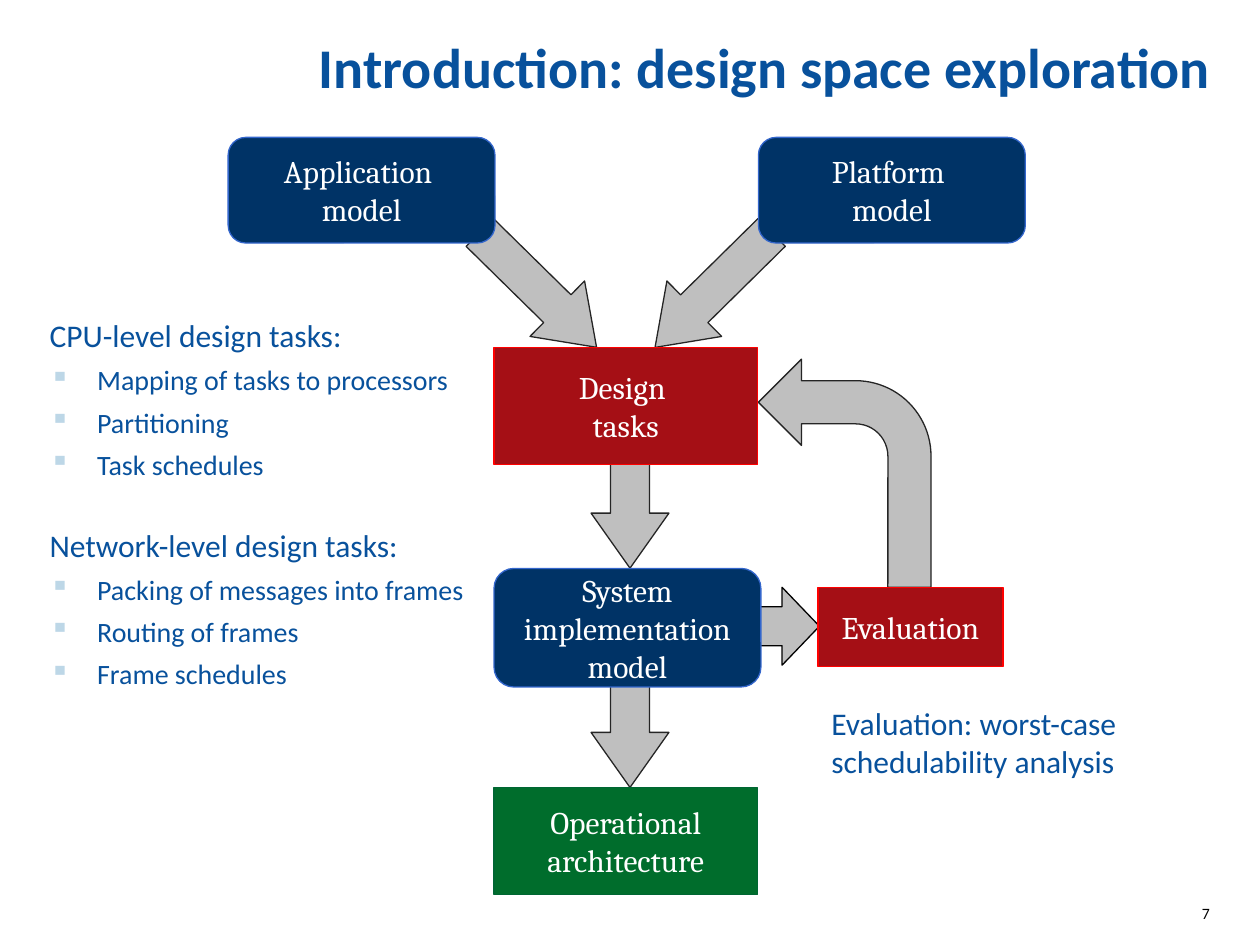
import pptx
import pptx.util
import pptx.dml.color
import pptx.enum.shapes
import pptx.enum.text
import pptx.oxml.ns
import lxml.etree

Cm, Pt = pptx.util.Cm, pptx.util.Pt
KIND = pptx.enum.shapes.MSO_SHAPE
ALIGN = pptx.enum.text.PP_ALIGN
ANCHOR = pptx.enum.text.MSO_ANCHOR
COLOR = {
    "text": "08519C", "mark": "BDD7E7", "white": "FFFFFF", "black": "000000",
    "gray": "BFBFBF", "dark": "252525", "navy": "003366", "blue": "3366CC",
    "brick": "A50F15", "red": "FF0000", "green": "006D2C", "moss": "006633",
}
FRAME = {"margin_left": 0, "margin_top": 0, "margin_right": 0,
         "margin_bottom": 0, "word_wrap": True}
HEAD = {"name": "Calibri", "size": Pt(32), "bold": True}
LEAD = {"name": "Calibri", "size": Pt(18)}
ITEM = {"name": "Calibri", "size": Pt(16)}
LABEL = {"name": "Cambria", "size": Pt(18)}
SMALL = {"name": "Calibri", "size": Pt(9)}


def rgb(name):
    return pptx.dml.color.RGBColor.from_string(COLOR[name])


def apply(target, values):
    for key, value in values.items():
        setattr(target, key, value)


def style(para, font, color, align=ALIGN.LEFT):
    para.alignment = align
    apply(para.font, font)
    para.font.color.rgb = rgb(color)


def bullet(para):
    props = para._p.get_or_add_pPr()
    props.set("marL", str(Cm(0.96)))
    props.set("indent", str(-Cm(0.96)))
    tag = pptx.oxml.ns.qn
    hue = lxml.etree.SubElement(props, tag("a:buClr"))
    lxml.etree.SubElement(hue, tag("a:srgbClr")).set("val", COLOR["mark"])
    lxml.etree.SubElement(props, tag("a:buChar")).set("char", "▪")


def title(slide, box, text):
    shape = slide.shapes.title
    apply(shape, dict(zip(("left", "top", "width", "height"), map(Cm, box))))
    frame = shape.text_frame
    apply(frame, FRAME)
    frame.vertical_anchor = ANCHOR.BOTTOM
    frame.text = text
    para = frame.paragraphs[0]
    para.line_spacing = 0.8
    style(para, HEAD, "text", ALIGN.RIGHT)


def note(slide, box, lead, items=()):
    frame = slide.shapes.add_textbox(*map(Cm, box)).text_frame
    apply(frame, FRAME)
    frame.text = lead
    style(frame.paragraphs[0], LEAD, "text")
    for item in items:
        para = frame.add_paragraph()
        para.text = item
        para.space_before = Pt(5)
        bullet(para)
        style(para, ITEM, "text")


def number(slide, box, text):
    frame = slide.shapes.add_textbox(*map(Cm, box)).text_frame
    apply(frame, FRAME)
    frame.text = text
    style(frame.paragraphs[0], SMALL, "black", ALIGN.RIGHT)


def block(slide, kind, box, fill, line):
    shape = slide.shapes.add_shape(kind, *map(Cm, box))
    shape.shadow.inherit = False
    shape.fill.solid()
    shape.fill.fore_color.rgb = rgb(fill)
    shape.line.color.rgb = rgb(line)
    shape.line.width = Pt(0.75)
    return shape


def flow(slide, left, top):
    long, short = (3.3, 1.57), (2.34, 1.57)
    arrows = [
        (4.6, 2.29, long, 44.5, 0.707, "dark"),
        (8.13, 2.29, long, 135.4, 0.707, "dark"),
        (6.45, 6.25, long, 90, 0.707, "dark"),
        (6.45, 10.67, long, 90, 0.707, "dark"),
        (9.58, 9.07, short, 0, 0.479, "black"),
    ]
    for x, y, size, turn, tip, line in arrows:
        arrow = block(slide, KIND.RIGHT_ARROW, (left + x, top + y, *size),
                      "gray", line)
        arrow.rotation = turn
        arrow.adjustments[1] = tip
    bend = block(slide, KIND.BENT_ARROW,
                 (left + 10.69, top + 4.47, 3.48, 4.6), "gray", "dark")
    bend._element.spPr.find(pptx.oxml.ns.qn("a:xfrm")).set("flipH", "1")

    model = (KIND.ROUNDED_RECTANGLE, "navy", "blue")
    task = (KIND.RECTANGLE, "brick", "red")
    final = (KIND.RECTANGLE, "green", "moss")
    nodes = [
        ("Application \vmodel", model, 0, 0, 5.38, 2.13),
        ("Platform \vmodel", model, 10.69, 0, 5.38, 2.13),
        ("Design \vtasks", task, 5.36, 4.24, 5.31, 2.36),
        ("System implementation model", model, 5.36, 8.69, 5.38, 2.39),
        ("Evaluation", task, 11.89, 9.07, 3.73, 1.6),
        ("Operational architecture", final, 5.36, 13.11, 5.31, 2.16),
    ]
    for text, (kind, fill, line), x, y, wide, high in nodes:
        node = block(slide, kind, (left + x, top + y, wide, high), fill, line)
        frame = node.text_frame
        apply(frame, FRAME)
        frame.vertical_anchor = ANCHOR.MIDDLE
        frame.text = text
        style(frame.paragraphs[0], LABEL, "white", ALIGN.CENTER)


def main():
    deck = pptx.Presentation()
    apply(deck, {"slide_width": Cm(25.4), "slide_height": Cm(19.05)})
    slide = deck.slides.add_slide(deck.slide_layouts[5])
    title(slide, (1, 0, 23.42, 2), "Introduction: design space exploration")
    flow(slide, 4.6, 2.77)
    note(slide, (1, 6.38, 8.13, 3.56), "CPU-level design tasks:",
         ["Mapping of tasks to processors", "Partitioning", "Task schedules"])
    note(slide, (1, 10.6, 8.64, 3.56), "Network-level design tasks:",
         ["Packing of messages into frames", "Routing of frames",
          "Frame schedules"])
    note(slide, (16.76, 14.2, 8.64, 3.56),
         "Evaluation: worst-case schedulability analysis")
    number(slide, (23.55, 18.21, 0.84, 0.84), "7")
    deck.save("out.pptx")


if __name__ == "__main__":
    main()
